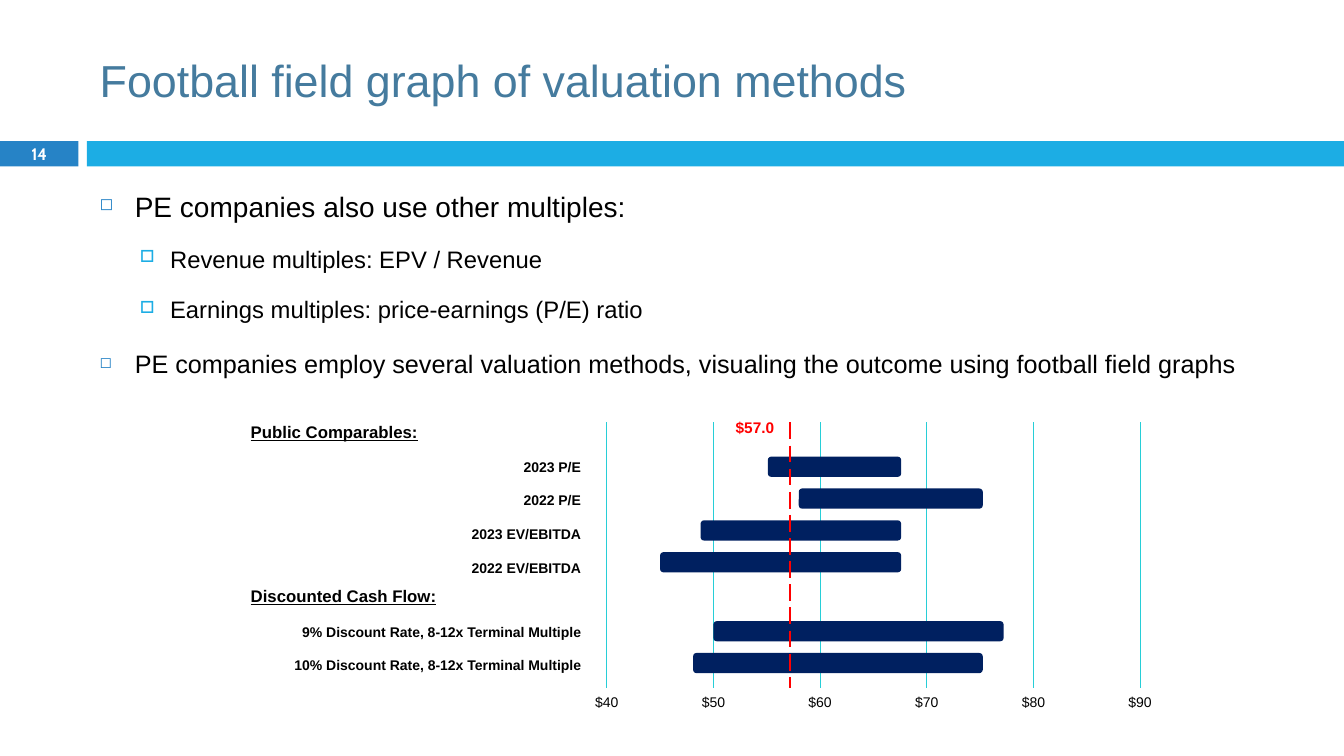
from dataclasses import dataclass

from lxml import etree
from pptx import Presentation
from pptx.dml.color import RGBColor
from pptx.enum.dml import MSO_LINE
from pptx.enum.shapes import MSO_CONNECTOR, MSO_SHAPE
from pptx.enum.text import MSO_ANCHOR, MSO_AUTO_SIZE, PP_ALIGN
from pptx.oxml.ns import qn
from pptx.util import Pt

LEFT, CENTER, RIGHT = PP_ALIGN.LEFT, PP_ALIGN.CENTER, PP_ALIGN.RIGHT
TOP, MIDDLE = MSO_ANCHOR.TOP, MSO_ANCHOR.MIDDLE
RECTANGLE, ROUNDED = MSO_SHAPE.RECTANGLE, MSO_SHAPE.ROUNDED_RECTANGLE
STRAIGHT = MSO_CONNECTOR.STRAIGHT
LONG_DASH = MSO_LINE.LONG_DASH
NO_AUTOFIT = MSO_AUTO_SIZE.NONE
TITLE_ONLY = 5


@dataclass(frozen=True)
class Theme:
    font: str = "Arial"
    number_font: str = "Cabin"
    title: str = "457B9E"
    text: str = "000000"
    white: str = "FFFFFF"
    number_band: str = "2683C6"
    band: str = "1CADE4"
    grid: str = "27CED7"
    bar: str = "002060"
    marker: str = "FF0000"
    title_size: float = 32
    number_size: float = 11.9
    heading_size: float = 12
    marker_size: float = 11
    label_size: float = 10


@dataclass(frozen=True)
class Box:
    left: float
    top: float
    width: float
    height: float

    def lengths(self):
        return Pt(self.left), Pt(self.top), Pt(self.width), Pt(self.height)


THEME = Theme()

BULLETS = [
    (0, 20, "PE companies also use other multiples:"),
    (1, 17, "Revenue multiples: EPV / Revenue"),
    (1, 17, "Earnings multiples: price-earnings (P/E) ratio"),
    (0, 18, "PE companies employ several valuation methods, "
            "visualing the outcome using football field graphs"),
]
BULLET_STYLES = [
    ("◻", THEME.number_band, 60, 25.2, -25.2, 7),
    ("□", THEME.band, 70, 50.4, -21.6, 5.5),
]

SECTIONS = [
    ("Public Comparables:", 1, 24.5, [
        ("2023 P/E", 55.1, 67.6),
        ("2022 P/E", 58, 75.25),
        ("2023 EV/EBITDA", 48.8, 67.6),
        ("2022 EV/EBITDA", 45, 67.6),
    ]),
    ("Discounted Cash Flow:", 1.5, 142, [
        ("9% Discount Rate, 8-12x Terminal Multiple", 50, 77.2),
        ("10% Discount Rate, 8-12x Terminal Multiple", 48.1, 75.25),
    ]),
]
AXIS_LOW, AXIS_HIGH, AXIS_STEP = 40, 90, 10
MARKER_VALUE, MARKER_LABEL = 57.2, "$57.0"
BAR_HEIGHT, BAR_PITCH = 14.4, 22.75


def style(para, size, color=THEME.text, bold=False, align=LEFT, font=THEME.font):
    para.alignment = align
    para.font.name = font
    para.font.size = Pt(size)
    para.font.bold = bold
    para.font.color.rgb = RGBColor.from_string(color)


def add_frame(page, box, anchor=TOP):
    frame = page.shapes.add_textbox(*box.lengths()).text_frame
    frame.word_wrap = True
    frame.vertical_anchor = anchor
    return frame


def add_label(page, box, text, size, **look):
    para = add_frame(page, box, MIDDLE).paragraphs[0]
    para.text = text
    style(para, size, align=CENTER, **look)


def add_block(page, kind, box, color):
    block = page.shapes.add_shape(kind, *box.lengths())
    block.shadow.inherit = False
    block.fill.solid()
    block.fill.fore_color.rgb = RGBColor.from_string(color)
    block.line.fill.background()


def add_vertical(page, x, top, bottom, color, width):
    line = page.shapes.add_connector(STRAIGHT, Pt(x), Pt(top), Pt(x), Pt(bottom))
    line.line.color.rgb = RGBColor.from_string(color)
    line.line.width = Pt(width)
    etree.SubElement(line._element.spPr, qn("a:effectLst"))
    return line


def next_para(frame, index):
    return frame.add_paragraph() if index else frame.paragraphs[0]


def set_bullet(para, symbol, color, percent, margin, indent):
    props = para._p.get_or_add_pPr()
    props.set("marL", str(Pt(margin)))
    props.set("indent", str(Pt(indent)))
    tint = etree.SubElement(props, qn("a:buClr"))
    etree.SubElement(tint, qn("a:srgbClr"), val=color)
    etree.SubElement(props, qn("a:buSzPct"), val=str(percent * 1000))
    etree.SubElement(props, qn("a:buChar"), char=symbol)


def place_title(page, box, text):
    title = page.shapes.title
    title.left, title.top, title.width, title.height = box.lengths()
    frame = title.text_frame
    frame.text = text
    frame.auto_size = NO_AUTOFIT
    frame.vertical_anchor = MIDDLE
    style(frame.paragraphs[0], THEME.title_size, THEME.title)


def place_band(page, box, number):
    number_box = Box(box.left, box.top, 56, box.height)
    bar_left = box.left + 62
    bar_box = Box(bar_left, box.top, box.left + box.width - bar_left, box.height)
    add_block(page, RECTANGLE, number_box, THEME.number_band)
    add_block(page, RECTANGLE, bar_box, THEME.band)
    add_label(page, number_box, number, THEME.number_size,
              color=THEME.white, bold=True, font=THEME.number_font)


def place_bullets(page, box):
    frame = add_frame(page, box)
    for index, (level, size, text) in enumerate(BULLETS):
        para = next_para(frame, index)
        para.text = text
        para.level = level
        *bullet, space = BULLET_STYLES[level]
        para.line_spacing = 1.5
        para.space_before = Pt(space)
        set_bullet(para, *bullet)
        style(para, size)


def place_methods(page, box):
    frame = add_frame(page, box)
    lines = []
    for heading, spacing, _, ranges in SECTIONS:
        lines.append((heading, spacing, THEME.heading_size, LEFT))
        lines += [(label, 2, THEME.label_size, RIGHT) for label, _, _ in ranges]
    for index, (text, spacing, size, align) in enumerate(lines):
        para = next_para(frame, index)
        para.text = text
        para.line_spacing = float(spacing)
        style(para, size, bold=True, align=align)
        para.font.underline = align == LEFT


def place_field(page, box):
    scale = box.width / (AXIS_HIGH - AXIS_LOW)
    bottom = box.top + box.height

    def x_at(value):
        return box.left + (value - AXIS_LOW) * scale

    ticks = range(AXIS_LOW, AXIS_HIGH + 1, AXIS_STEP)
    for value in ticks:
        add_vertical(page, x_at(value), box.top, bottom, THEME.grid, 0.79)
    for value in ticks:
        add_label(page, Box(x_at(value) - 21.6, bottom + 0.7, 43.2, 19.4),
                  f"${value}", THEME.label_size)
    for _, _, offset, ranges in SECTIONS:
        for row, (_, low, high) in enumerate(ranges):
            bar = Box(x_at(low), box.top + offset + row * BAR_PITCH,
                      (high - low) * scale, BAR_HEIGHT)
            add_block(page, ROUNDED, bar, THEME.bar)
    marker_x = x_at(MARKER_VALUE)
    marker = add_vertical(page, marker_x, box.top, bottom + 0.7, THEME.marker, 1.5)
    marker.line.dash_style = LONG_DASH
    add_label(page, Box(marker_x - 59, box.top - 6.5, 67.7, 20.2), MARKER_LABEL,
              THEME.marker_size, color=THEME.marker, bold=True)


def build_valuation_slide(deck):
    page = deck.slides.add_slide(deck.slide_layouts[TITLE_ONLY])
    place_band(page, Box(0, 100.8, 960, 18), "14")
    place_title(page, Box(64, 18, 856, 78), "Football field graph of valuation methods")
    place_bullets(page, Box(64, 119.5, 841, 388))
    place_methods(page, Box(172, 297.4, 250, 221.8))
    place_field(page, Box(433.4, 301.7, 381, 189.4))


def main():
    deck = Presentation()
    deck.slide_width, deck.slide_height = Pt(960), Pt(540)
    build_valuation_slide(deck)
    deck.save("out.pptx")


if __name__ == "__main__":
    main()
